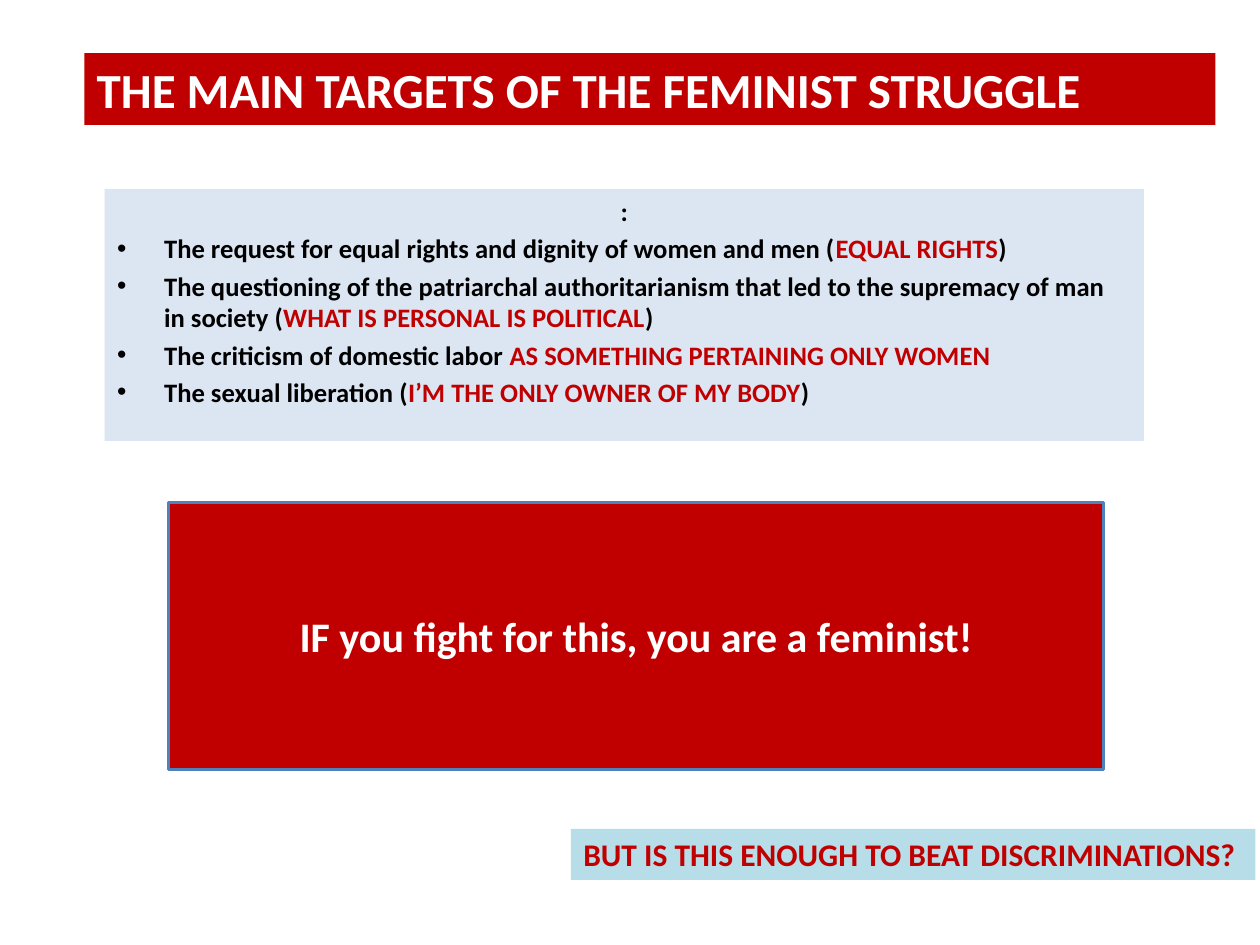
from lxml.etree import SubElement
from pptx import Presentation
from pptx.dml.color import RGBColor
from pptx.enum.shapes import MSO_SHAPE
from pptx.enum.text import MSO_ANCHOR, MSO_AUTO_SIZE, PP_ALIGN
from pptx.oxml.ns import qn
from pptx.util import Cm, Pt

RED, BLACK, WHITE = "C00000", "000000", "FFFFFF"
PALE_BLUE, AQUA, BLUE = "DCE6F2", "B7DEE8", "4F81BD"

HEADING = "THE MAIN TARGETS OF THE FEMINIST STRUGGLE"
STATEMENT = "IF you fight for this, you are a feminist!"
QUESTION = "BUT IS THIS ENOUGH TO BEAT DISCRIMINATIONS?"
TARGETS_LEAD = ":"
TARGETS = [
    [("The request for equal rights and dignity of women and men (", BLACK),
     ("EQUAL RIGHTS", RED), (")", BLACK)],
    [("The questioning of the patriarchal authoritarianism that led to "
      "the supremacy of man in society (", BLACK),
     ("WHAT IS PERSONAL IS POLITICAL", RED), (")", BLACK)],
    [("The criticism of domestic labor ", BLACK),
     ("AS SOMETHING PERTAINING ONLY WOMEN", RED)],
    [("The sexual liberation (", BLACK),
     ("I’M THE ONLY OWNER OF MY BODY", RED), (")", BLACK)],
]
TARGET_SIZE = 15.2
HANGING = Cm(0.95)


def color(hex_value):
    return RGBColor.from_string(hex_value)


def style_box(box, fill, anchor):
    box.fill.solid()
    box.fill.fore_color.rgb = color(fill)
    frame = box.text_frame
    frame.word_wrap = True
    frame.auto_size = MSO_AUTO_SIZE.NONE
    frame.vertical_anchor = anchor
    return frame


def add_panel(slide, bounds, fill, anchor=MSO_ANCHOR.TOP):
    panel = slide.shapes.add_shape(MSO_SHAPE.RECTANGLE, *map(Cm, bounds))
    panel.shadow.inherit = False
    panel.line.fill.background()
    return style_box(panel, fill, anchor)


def write(paragraph, pieces, size, align=PP_ALIGN.LEFT):
    paragraph.alignment = align
    for words, hex_value in pieces:
        run = paragraph.add_run()
        run.text = words
        run.font.name = "Calibri"
        run.font.size = Pt(size)
        run.font.bold = True
        run.font.color.rgb = color(hex_value)


def add_bullet(paragraph):
    properties = paragraph._p.get_or_add_pPr()
    properties.set("marL", str(HANGING))
    properties.set("indent", str(-HANGING))
    SubElement(properties, qn("a:buFont"), typeface="Arial")
    SubElement(properties, qn("a:buChar"), char="•")


def main():
    deck = Presentation()
    deck.slide_width, deck.slide_height = Cm(25.4), Cm(19.05)
    slide = deck.slides.add_slide(deck.slide_layouts[5])

    statement = slide.shapes.title
    statement.left, statement.top = Cm(3.4), Cm(10.13)
    statement.width, statement.height = Cm(18.85), Cm(5.38)
    statement.line.color.rgb = color(BLUE)
    statement.line.width = Pt(2)
    frame = style_box(statement, RED, MSO_ANCHOR.MIDDLE)
    write(frame.paragraphs[0], [(STATEMENT, WHITE)], 24, PP_ALIGN.CENTER)

    targets = add_panel(slide, (2.11, 3.81, 20.95, 5.08), PALE_BLUE)
    lead = targets.paragraphs[0]
    lead.space_before = Pt(3)
    write(lead, [(TARGETS_LEAD, BLACK)], TARGET_SIZE, PP_ALIGN.CENTER)
    for pieces in TARGETS:
        target = targets.add_paragraph()
        target.space_before = Pt(3)
        add_bullet(target)
        write(target, pieces, TARGET_SIZE)

    heading = add_panel(slide, (1.7, 1.07, 22.8, 1.45), RED)
    write(heading.paragraphs[0], [(HEADING, WHITE)], 28)

    question = add_panel(slide, (11.51, 16.71, 13.8, 1.03), AQUA)
    write(question.paragraphs[0], [(QUESTION, RED)], 18)

    deck.save("out.pptx")


if __name__ == "__main__":
    main()
